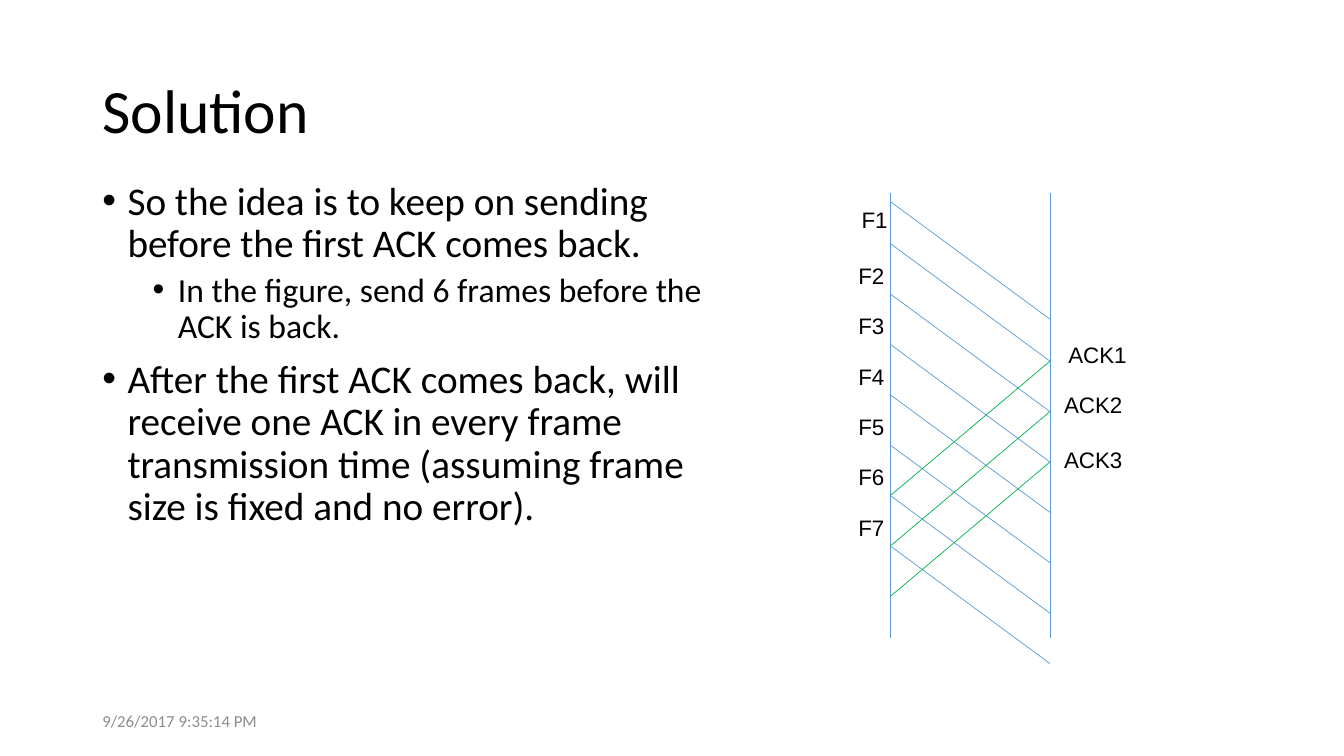
from dataclasses import dataclass

from pptx import Presentation
from pptx.dml.color import RGBColor
from pptx.enum.shapes import MSO_CONNECTOR
from pptx.enum.text import MSO_ANCHOR, MSO_AUTO_SIZE, PP_ALIGN
from pptx.oxml.ns import qn
from pptx.slide import Slide
from pptx.text.text import TextFrame, _Paragraph
from pptx.util import Pt
from lxml.etree import SubElement

BLACK = RGBColor(0x00, 0x00, 0x00)
GRAY = RGBColor(0x8C, 0x8C, 0x8C)
BLUE = RGBColor(0x5B, 0x9B, 0xD5)
GREEN = RGBColor(0x00, 0xB0, 0x50)

SEND, RECV = 636, 750
TOP, BASE = 138, 456
STEP = 36
FALL, RISE = 84, 96


@dataclass
class Line:
    """A straight line between two points."""
    x1: float
    y1: float
    x2: float
    y2: float
    color: RGBColor = BLUE


@dataclass
class Label:
    """A short text beside the time lines."""
    text: str
    left: float
    top: float
    width: float


@dataclass
class Point:
    """A bullet with its level, size and space before."""
    text: str
    level: int
    size: float
    space: float


POINTS = [
    Point("So the idea is to keep on sending before the first ACK comes back.", 0, 28, 10),
    Point("In the figure, send 6 frames before the ACK is back.", 1, 24, 5),
    Point("After the first ACK comes back, will receive one ACK in every frame "
          "transmission time (assuming frame size is fixed and no error).", 0, 28, 10),
]
STARTS = [144] + [174 + STEP * i for i in range(7)]
LINES = [
    *(Line(x, TOP, x, BASE) for x in (SEND, RECV)),
    *(Line(SEND, y, RECV, y + FALL) for y in STARTS),
    *(Line(RECV, y, SEND, y + RISE, GREEN) for y in (258, 294, 330)),
]
LABELS = [
    Label("F1", 608.4, 144, 33.1),
    *(Label(f"F{i + 2}", 606, 183.6 + STEP * i, 33.1) for i in range(6)),
    Label("ACK1", 756, 240, 56.9),
    Label("ACK2", 753, 276, 56.9),
    Label("ACK3", 753, 315.4, 56.9),
]


def write(para: _Paragraph, text: str, size: float,
          color: RGBColor = BLACK, face: str = "Calibri") -> None:
    """Add one formatted run to a paragraph."""
    run = para.add_run()
    run.text = text
    run.font.size = Pt(size)
    run.font.name = face
    run.font.color.rgb = color


def add_box(slide: Slide, left: float, top: float, width: float, height: float,
            wrap: bool = True) -> TextFrame:
    """Add a text box and return its text frame."""
    frame = slide.shapes.add_textbox(Pt(left), Pt(top), Pt(width), Pt(height)).text_frame
    frame.word_wrap = wrap
    return frame


def add_title(slide: Slide, text: str) -> None:
    """Place and fill the title."""
    title = slide.shapes.title
    title.left, title.top, title.width, title.height = Pt(66), Pt(28.8), Pt(828), Pt(104.4)
    frame = title.text_frame
    frame.auto_size = MSO_AUTO_SIZE.NONE
    frame.vertical_anchor = MSO_ANCHOR.MIDDLE
    para = frame.paragraphs[0]
    para.alignment = PP_ALIGN.LEFT
    para.line_spacing = 0.9
    write(para, text, 44)


def add_points(slide: Slide, points: list[Point]) -> None:
    """Write the bulleted text."""
    frame = add_box(slide, 66, 126, 456, 356.4)
    for i, point in enumerate(points):
        para = frame.add_paragraph() if i else frame.paragraphs[0]
        para.level = point.level
        para.line_spacing = 0.9
        para.space_before = Pt(point.space)
        props = para._p.get_or_add_pPr()
        props.set("marL", str(Pt(18 + 36 * point.level)))
        props.set("indent", str(Pt(-18)))
        SubElement(props, qn("a:buFont")).set("typeface", "Arial")
        SubElement(props, qn("a:buChar")).set("char", "•")
        write(para, point.text, point.size)


def add_line(slide: Slide, line: Line) -> None:
    """Draw a thin line without a shadow."""
    shape = slide.shapes.add_connector(
        MSO_CONNECTOR.STRAIGHT, Pt(line.x1), Pt(line.y1), Pt(line.x2), Pt(line.y2))
    shape.line.color.rgb = line.color
    shape.line.width = Pt(0.5)
    SubElement(shape._element.spPr, qn("a:effectLst"))


def add_label(slide: Slide, label: Label) -> None:
    """Write a label that fits its text."""
    frame = add_box(slide, label.left, label.top, label.width, 26.6, False)
    frame.auto_size = MSO_AUTO_SIZE.SHAPE_TO_FIT_TEXT
    write(frame.paragraphs[0], label.text, 16, face="Arial")


def main() -> None:
    """Build and save the slide."""
    deck = Presentation()
    deck.slide_width, deck.slide_height = Pt(960), Pt(540)
    slide = deck.slides.add_slide(deck.slide_layouts[5])
    add_title(slide, "Solution")
    add_points(slide, POINTS)
    date = add_box(slide, 66, 500.5, 216, 28.8)
    date.vertical_anchor = MSO_ANCHOR.MIDDLE
    write(date.paragraphs[0], "9/26/2017 9:35:14 PM", 12, GRAY)
    for line in LINES:
        add_line(slide, line)
    for label in LABELS:
        add_label(slide, label)
    deck.save("out.pptx")


if __name__ == "__main__":
    main()
